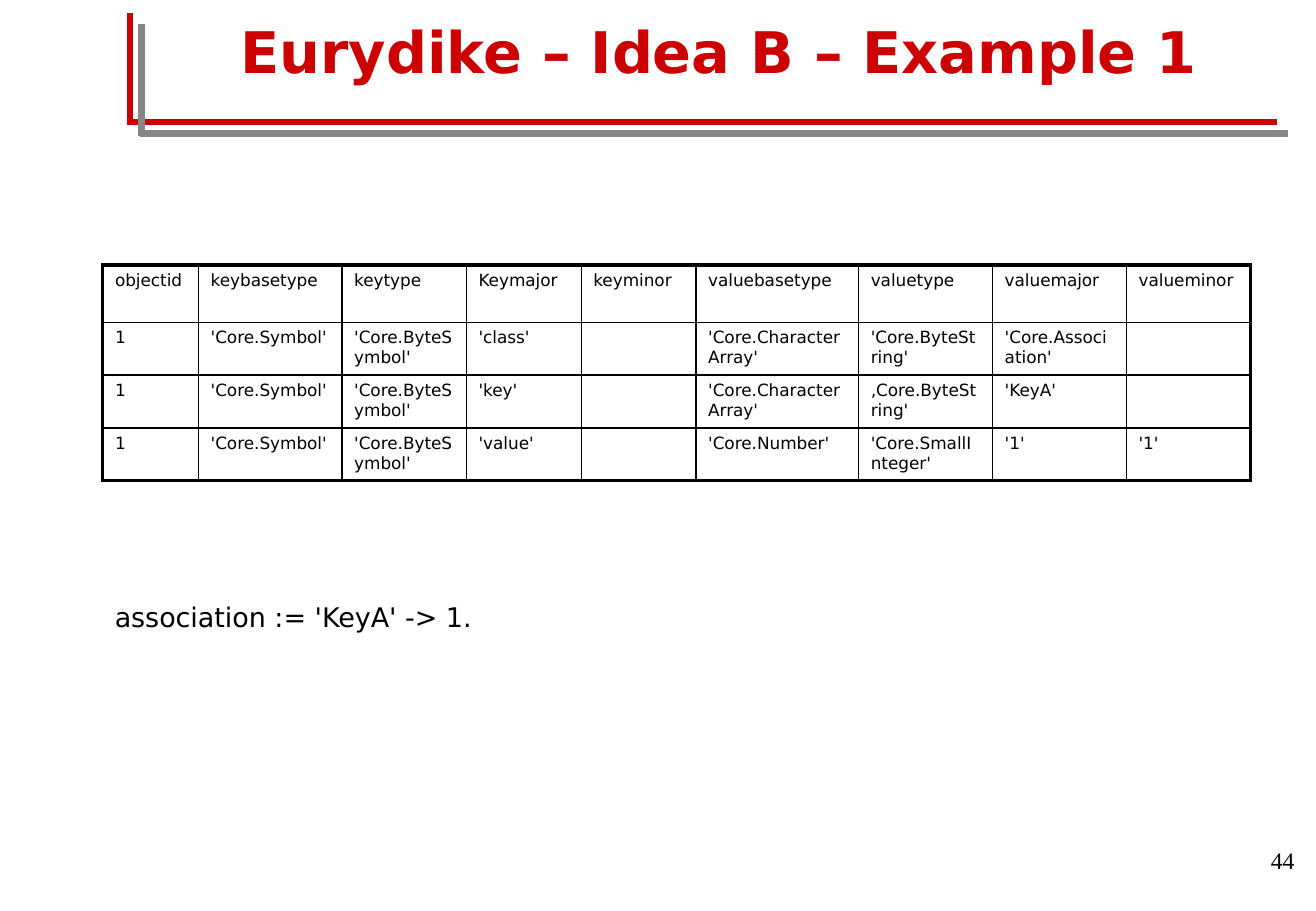
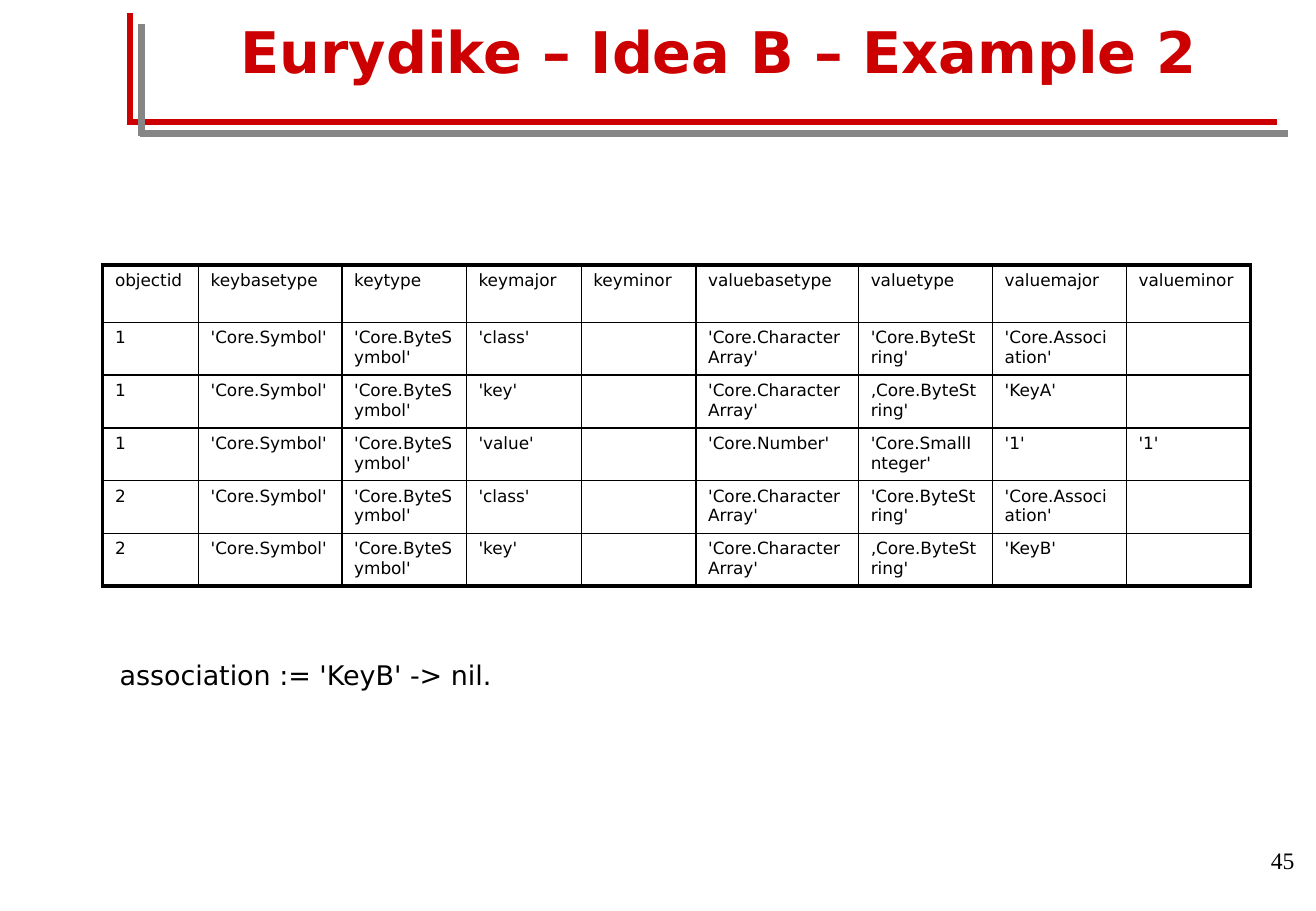
from lxml.etree import SubElement
from pptx import Presentation
from pptx.dml.color import RGBColor
from pptx.enum.shapes import MSO_CONNECTOR
from pptx.enum.text import MSO_ANCHOR as ANCHOR, PP_ALIGN as ALIGN
from pptx.oxml.ns import qn
from pptx.util import Cm, Pt

COLORS = {"red": "CC0000", "gray": "868686", "black": "000000", "white": "FFFFFF"}
SANS = "DejaVu Sans"
SERIF = "Times New Roman"


def write(frame, text, size, font=SANS, color="black", bold=False,
          align=ALIGN.LEFT, anchor=ANCHOR.TOP, spacing=1.0):
    frame.word_wrap = True
    frame.vertical_anchor = anchor
    paragraph = frame.paragraphs[0]
    paragraph.alignment = align
    paragraph.line_spacing = spacing
    run = paragraph.add_run()
    run.text = text
    run.font.size = Pt(size)
    run.font.name = font
    run.font.bold = bold
    run.font.color.rgb = RGBColor.from_string(COLORS[color])


def add_border(cell, side, width):
    line = SubElement(cell._tc.get_or_add_tcPr(), qn(f"a:ln{side}"), w=str(Pt(width)))
    fill = SubElement(line, qn("a:solidFill"))
    SubElement(fill, qn("a:srgbClr"), val=COLORS["black"])


column_widths = [2, 3, 2.6, 2.4, 2.4, 3.4, 2.8, 2.8, 2.6]
header_height, row_height = 1.2, 1.1
thin, thick = 1, 2.25

key_types = ["'Core.Symbol'", "'Core.ByteSymbol'"]
class_entry = ["'class'", "", "'Core.CharacterArray'", "'Core.ByteString'", "'Core.Association'", ""]
key_entry = ["'key'", "", "'Core.CharacterArray'", "‚Core.ByteString'"]
value_entry = ["'value'", "", "'Core.Number'", "'Core.SmallInteger'", "'1'", "'1'"]
first_object = [
    ["1", *key_types, *class_entry],
    ["1", *key_types, *key_entry, "'KeyA'", ""],
    ["1", *key_types, *value_entry],
]
second_object = [
    ["2", *key_types, *class_entry],
    ["2", *key_types, *key_entry, "'KeyB'", ""],
]

examples = [
    {"title": "Eurydike – Idea B – Example 1", "page": "44", "keymajor": "Keymajor",
     "records": first_object,
     "code": "association := 'KeyA' -> 1.", "code_at": (2.15, 12.52)},
    {"title": "Eurydike – Idea B – Example 2", "page": "45", "keymajor": "keymajor",
     "records": first_object + second_object,
     "code": "association := 'KeyB' -> nil.", "code_at": (2.25, 13.72)},
]

deck = Presentation()
deck.slide_width, deck.slide_height = Cm(27.51), Cm(19.05)
background = deck.slide_master.background.fill
background.solid()
background.fore_color.rgb = RGBColor.from_string(COLORS["white"])

for example in examples:
    slide = deck.slides.add_slide(deck.slide_layouts[6])
    shapes = slide.shapes

    for color, shift in [("red", 0), ("gray", 0.24)]:
        for ends in [(2.69, 2.55, 26.69, 2.55), (2.72, 2.61, 2.72, 0.27)]:
            rule = shapes.add_connector(MSO_CONNECTOR.STRAIGHT, *[Cm(end + shift) for end in ends])
            rule.line.color.rgb = RGBColor.from_string(COLORS[color])
            rule.line.width = Pt(4)
            SubElement(rule._element.spPr, qn("a:effectLst"))

    title = shapes.add_textbox(Cm(2.54), Cm(0), Cm(24.97), Cm(2.1))
    write(title.text_frame, example["title"], 34, color="red", bold=True,
          align=ALIGN.CENTER, anchor=ANCHOR.MIDDLE)

    code_left, code_top = example["code_at"]
    code = shapes.add_textbox(Cm(code_left), Cm(code_top), Cm(25.17), Cm(1.8))
    write(code.text_frame, example["code"], 16, spacing=0.9)

    page = shapes.add_textbox(Cm(21.56), Cm(17.35), Cm(5.75), Cm(1.27))
    write(page.text_frame, example["page"], 14, font=SERIF,
          align=ALIGN.RIGHT, anchor=ANCHOR.MIDDLE)

    header = ["objectid", "keybasetype", "keytype", example["keymajor"], "keyminor",
              "valuebasetype", "valuetype", "valuemajor", "valueminor"]
    records = [header, *example["records"]]
    heights = [header_height] + [row_height] * len(example["records"])
    table = shapes.add_table(len(records), len(header), Cm(2.15), Cm(5.54),
                             Cm(sum(column_widths)), Cm(sum(heights))).table
    table.first_row = table.horz_banding = False
    for column, width in zip(table.columns, column_widths):
        column.width = Cm(width)
    for row, height in zip(table.rows, heights):
        row.height = Cm(height)

    last_row, last_column = len(records) - 1, len(header) - 1
    for row_index, record in enumerate(records):
        for column_index, entry in enumerate(record):
            cell = table.cell(row_index, column_index)
            outer_sides = {"L": column_index == 0, "R": column_index == last_column,
                           "T": row_index == 0, "B": row_index == last_row}
            for side, is_outer in outer_sides.items():
                add_border(cell, side, thick if is_outer else thin)
            cell.fill.background()
            if entry:
                write(cell.text_frame, entry, 10)

deck.save("out.pptx")
